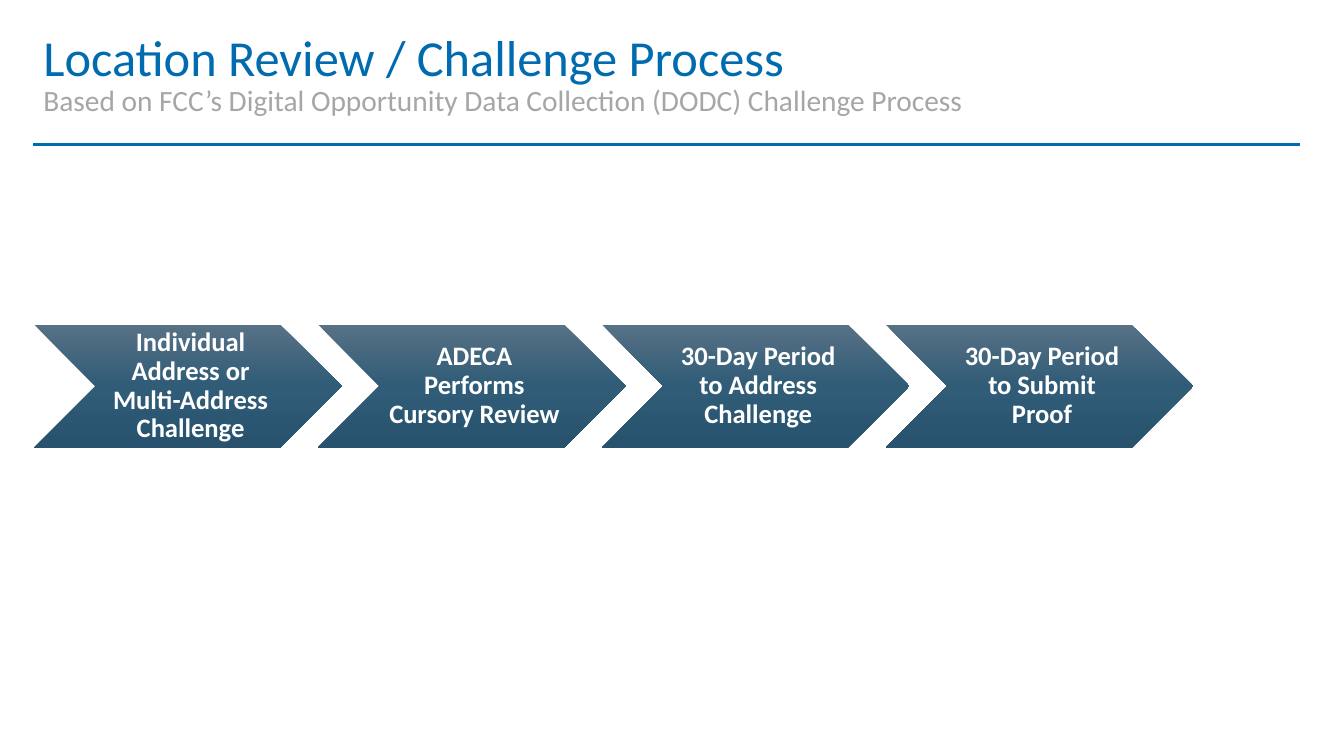
from copy import deepcopy

from lxml.etree import SubElement
from pptx import Presentation
from pptx.dml.color import RGBColor
from pptx.enum.shapes import MSO_CONNECTOR, MSO_SHAPE
from pptx.enum.text import MSO_ANCHOR, MSO_AUTO_SIZE, PP_ALIGN
from pptx.oxml.ns import qn
from pptx.util import Inches, Pt

# Content
TITLE = "Location Review / Challenge Process"
SUBTITLE = "Based on FCC’s Digital Opportunity Data Collection (DODC) Challenge Process"
STEPS = [
    "Individual Address or Multi-Address Challenge",
    "ADECA Performs Cursory Review",
    "30-Day Period to Address Challenge",
    "30-Day Period to Submit Proof",
]

# Colours
BLUE = RGBColor(0x00, 0x6B, 0xAE)
GREY = RGBColor(0xA6, 0xA6, 0xA6)
WHITE = RGBColor(0xFF, 0xFF, 0xFF)
STEP_GRADIENT = [
    (0, RGBColor(0x57, 0x71, 0x85)),
    (0.5, RGBColor(0x30, 0x5C, 0x77)),
    (1, RGBColor(0x28, 0x52, 0x6D)),
]

# Grid, in inches
SLIDE_W, SLIDE_H = 13.33, 7.5
MARGIN = 0.33
RULE_Y, RULE_END = 1.43, 12.89
STEP_LEFT, STEP_TOP = 0.34, 3.22
STEP_W, STEP_H = 3.05, 1.22
STEP_PITCH = 2.815

# Formats
TITLE_FONT = {"size": Pt(36), "bold": False, "color": BLUE}
SUBTITLE_FONT = {"size": Pt(21), "bold": False, "color": GREY}
STEP_FONT = {"size": Pt(19), "bold": True, "color": WHITE}
HEADING_FRAME = {"vertical_anchor": MSO_ANCHOR.MIDDLE}
SUBTITLE_FRAME = {"vertical_anchor": MSO_ANCHOR.TOP}
STEP_FRAME = {
    "vertical_anchor": MSO_ANCHOR.MIDDLE,
    "margin_left": Inches(0.08),
    "margin_right": Inches(0.03),
    "margin_top": Inches(0.03),
    "margin_bottom": Inches(0.03),
}


def place(shape, *box):
    for side, length in zip(("left", "top", "width", "height"), box):
        setattr(shape, side, Inches(length))


def write(shape, text, font_format, frame_format, align):
    frame = shape.text_frame
    frame.text = text
    frame.word_wrap = True
    frame.auto_size = MSO_AUTO_SIZE.NONE
    for name, value in frame_format.items():
        setattr(frame, name, value)
    paragraph = frame.paragraphs[0]
    paragraph.alignment = align
    paragraph.line_spacing = 0.9
    font = paragraph.runs[0].font
    font.name = "Calibri"
    for name, value in font_format.items():
        if name == "color":
            font.color.rgb = value
        else:
            setattr(font, name, value)
    return paragraph


def fill_gradient(fill, colours):
    fill.gradient()
    fill.gradient_angle = 270
    stop_list = fill._fill._gradFill.find(qn("a:gsLst"))
    stop_list.append(deepcopy(stop_list[0]))
    for stop, (position, colour) in zip(fill.gradient_stops, colours):
        stop.position = position
        stop.color.rgb = colour


def main():
    deck = Presentation()
    deck.slide_width, deck.slide_height = Inches(SLIDE_W), Inches(SLIDE_H)
    slide = deck.slides.add_slide(deck.slide_layouts[1])
    heading, subtitle = slide.placeholders

    # Header rule
    rule = slide.shapes.add_connector(
        MSO_CONNECTOR.STRAIGHT,
        Inches(MARGIN), Inches(RULE_Y), Inches(RULE_END), Inches(RULE_Y),
    )
    rule.line.color.rgb = BLUE
    rule.line.width = Pt(2.25)
    SubElement(rule._element.spPr, qn("a:effectLst"))

    # Title and subtitle
    place(heading, MARGIN, 0.24, 11.5, 0.71)
    write(heading, TITLE, TITLE_FONT, HEADING_FRAME, PP_ALIGN.LEFT)
    place(subtitle, MARGIN, 0.8, 9.55, 0.48)
    line = write(subtitle, SUBTITLE, SUBTITLE_FONT, SUBTITLE_FRAME, PP_ALIGN.LEFT)
    line.space_before = Pt(10)
    properties = line._p.get_or_add_pPr()
    for name in ("marL", "indent"):
        properties.set(name, "0")
    SubElement(properties, qn("a:buNone"))

    # Process steps
    for column, step in enumerate(STEPS):
        chevron = slide.shapes.add_shape(MSO_SHAPE.CHEVRON, 0, 0, 0, 0)
        place(chevron, STEP_LEFT + column * STEP_PITCH, STEP_TOP, STEP_W, STEP_H)
        chevron.shadow.inherit = False
        chevron.line.fill.background()
        fill_gradient(chevron.fill, STEP_GRADIENT)
        write(chevron, step, STEP_FONT, STEP_FRAME, PP_ALIGN.CENTER)

    deck.save("out.pptx")


if __name__ == "__main__":
    main()
